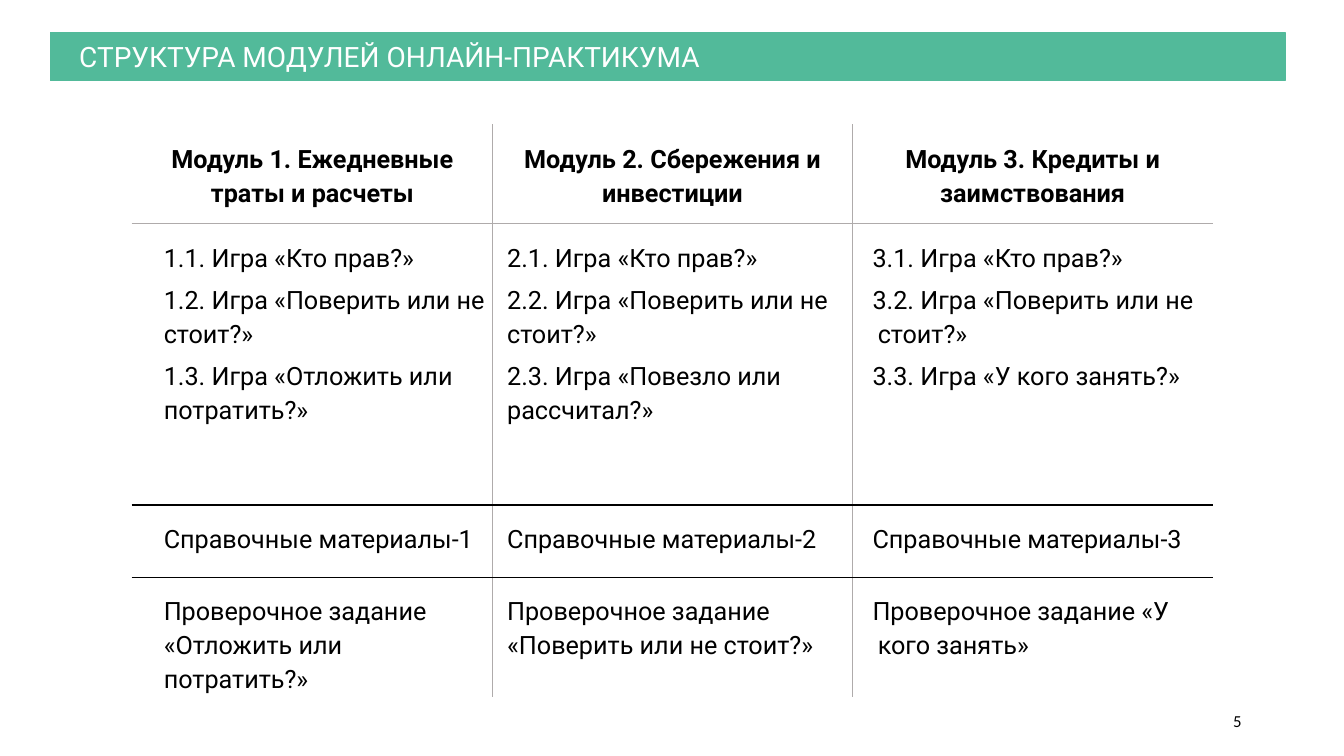
from dataclasses import dataclass

from lxml.etree import SubElement
from pptx import Presentation
from pptx.dml.color import RGBColor as Rgb
from pptx.enum.shapes import MSO_SHAPE as Shape
from pptx.enum.text import MSO_ANCHOR as Anchor, PP_ALIGN as Align
from pptx.oxml import parse_xml
from pptx.oxml.ns import nsdecls, qn
from pptx.util import Emu, Pt

PX = 9525  # EMU in one px, 96 px to the inch
INK = {"green": "52BA9A", "white": "FFFFFF", "black": "000000", "gray": "AFABAB"}
FONT = "Roboto"


@dataclass
class Rule:
    ink: str
    width: float


@dataclass
class Module:
    title: str
    games: list[str]
    guide: str
    test: str
    inset: int
    margin: int = 0
    indent: int = 0

    def rows(self) -> list[list[str]]:
        return [[self.title], self.games, [self.guide], [self.test]]


WHITE, GRAY, BLACK = Rule("white", 1), Rule("gray", 0.75), Rule("black", 1)
ACROSS = [WHITE, GRAY, BLACK, BLACK, WHITE]  # top to bottom
DOWN = [WHITE, GRAY, GRAY, WHITE]  # left to right
HEIGHTS = [94, 268, 69, 114]
WIDTH = 343

MODULES = [
    Module("Модуль 1. Ежедневные траты и расчеты",
           ["1.1. Игра «Кто прав?»", "1.2. Игра «Поверить или не стоит?»",
            "1.3. Игра «Отложить или потратить?»"],
           "Справочные материалы-1",
           "Проверочное задание «Отложить или потратить?»", 30),
    Module("Модуль 2. Сбережения и инвестиции",
           ["2.1. Игра «Кто прав?»", "2.2. Игра «Поверить или не стоит?»",
            "2.3. Игра «Повезло или рассчитал?»"],
           "Справочные материалы-2",
           "Проверочное задание «Поверить или не стоит?»", 0, 14),
    Module("Модуль 3. Кредиты и заимствования",
           ["3.1. Игра «Кто прав?»", "3.2. Игра «Поверить или не стоит?»",
            "3.3. Игра «У кого занять?»"],
           "Справочные материалы-3",
           "Проверочное задание «У кого занять»", 0, 24, -5),
]


def px(n: int) -> Emu:
    return Emu(n * PX)


def tint(name: str) -> Rgb:
    return Rgb.from_string(INK[name])


def write(para, text: str, size: int, ink: str, font: str = FONT, bold: bool = False) -> None:
    run = para.add_run()
    run.text = text
    run.font.size, run.font.name, run.font.bold = Pt(size), font, bold
    run.font.color.rgb = tint(ink)


def shift(para, margin: int, indent: int) -> None:
    props = para._p.get_or_add_pPr()
    props.set("marL", str(px(margin)))
    props.set("indent", str(px(indent)))


def edge(cell, sides: dict[str, Rule]) -> None:
    props = cell._tc.get_or_add_tcPr()
    for spot, (side, rule) in enumerate(sides.items()):
        line = parse_xml(f'<a:ln{side} {nsdecls("a")} w="{Pt(rule.width)}"/>')
        fill = SubElement(line, qn("a:solidFill"))
        SubElement(fill, qn("a:srgbClr"), val=INK[rule.ink])
        props.insert(spot, line)


def fill_cell(cell, mod: Module, lines: list[str], head: bool) -> None:
    cell.fill.background()
    cell.margin_left = px(7 if head else mod.inset)
    cell.margin_top = px(0 if head else 15)
    cell.margin_right, cell.margin_bottom = px(7), px(0)
    cell.vertical_anchor = Anchor.MIDDLE if head else Anchor.TOP
    frame = cell.text_frame
    for i, text in enumerate(lines):
        para = frame.add_paragraph() if i else frame.paragraphs[0]
        para.line_spacing = 1.15
        para.space_before = para.space_after = Pt(3)
        if head:
            para.alignment = Align.CENTER
        else:
            shift(para, mod.margin, mod.indent)
        write(para, text, 18, "black", bold=head)


def add_bar(slide) -> None:
    bar = slide.shapes.add_shape(Shape.RECTANGLE, px(48), px(31), px(1176), px(46))
    bar.shadow.inherit = False
    bar.fill.solid()
    bar.fill.fore_color.rgb = bar.line.color.rgb = tint("green")
    bar.line.width = Pt(1)
    bar.text_frame.vertical_anchor = Anchor.MIDDLE
    bar.text_frame.word_wrap = True
    para = bar.text_frame.paragraphs[0]
    para.alignment = Align.LEFT
    shift(para, 0, 18)
    write(para, "СТРУКТУРА МОДУЛЕЙ ОНЛАЙН-ПРАКТИКУМА", 20, "white")


def add_grid(slide) -> None:
    table = slide.shapes.add_table(
        len(HEIGHTS), len(MODULES), px(126), px(119),
        px(WIDTH * len(MODULES)), px(sum(HEIGHTS))).table
    table.first_row = table.horz_banding = False
    for row, height in zip(table.rows, HEIGHTS):
        row.height = px(height)
    for c, mod in enumerate(MODULES):
        table.columns[c].width = px(WIDTH)
        for r, lines in enumerate(mod.rows()):
            cell = table.cell(r, c)
            fill_cell(cell, mod, lines, head=r == 0)
            edge(cell, {"L": DOWN[c], "R": DOWN[c + 1],
                        "T": ACROSS[r], "B": ACROSS[r + 1]})


def add_page(slide) -> None:
    frame = slide.shapes.add_textbox(px(904), px(667), px(288), px(38)).text_frame
    frame.word_wrap = True
    frame.vertical_anchor = Anchor.MIDDLE
    para = frame.paragraphs[0]
    para.alignment = Align.RIGHT
    write(para, "5", 12, "black", "Calibri")


def main() -> None:
    deck = Presentation()
    deck.slide_width, deck.slide_height = px(1280), px(720)
    slide = deck.slides.add_slide(deck.slide_layouts[6])
    add_bar(slide)
    add_grid(slide)
    add_page(slide)
    deck.save("out.pptx")


if __name__ == "__main__":
    main()
